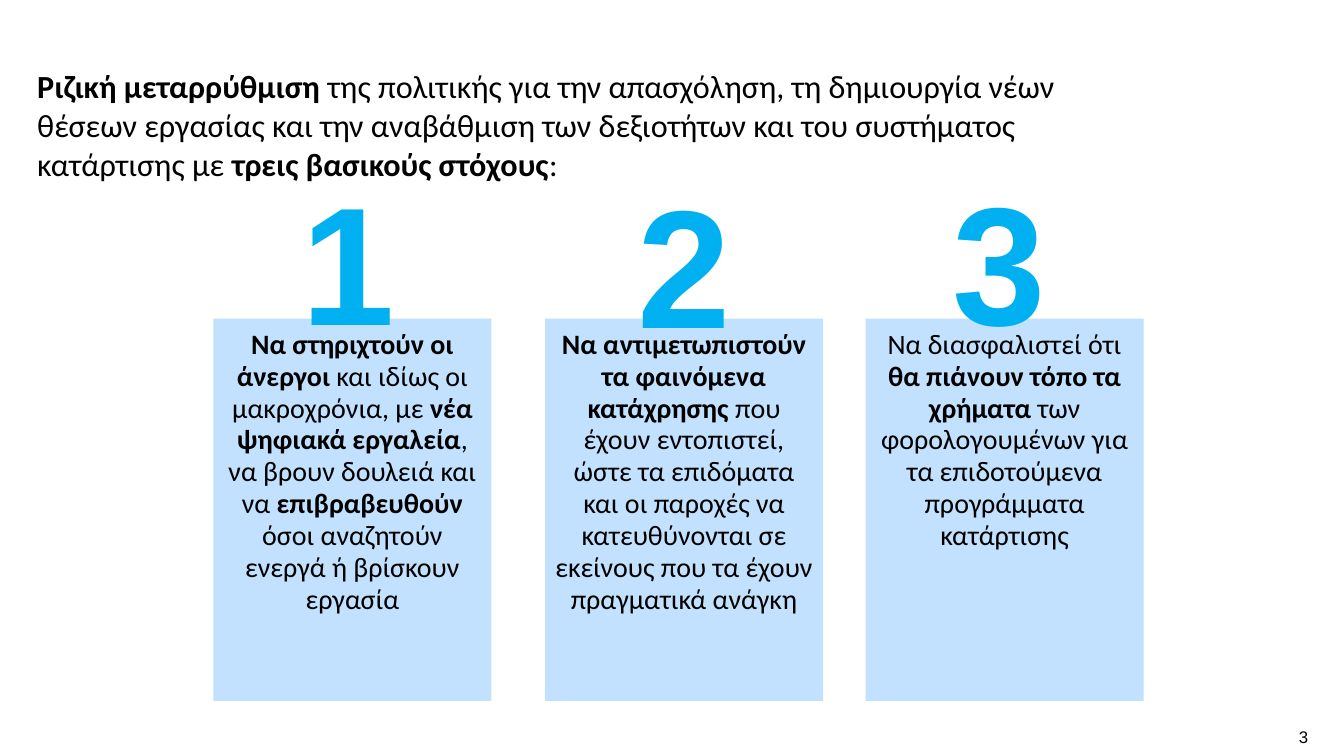
from dataclasses import dataclass

from pptx import Presentation
from pptx import util as u
from pptx.dml import color
from pptx.enum import text


@dataclass(frozen=True)
class Theme:
    ink: color.RGBColor = color.RGBColor.from_string("000000")
    accent: color.RGBColor = color.RGBColor.from_string("00B0F0")
    card: color.RGBColor = color.RGBColor.from_string("C1E1FE")
    body_font: str = "Calibri"
    number_font: str = "Arial"
    intro_size: int = 23
    goal_size: int = 20
    numeral_size: int = 120
    page_size: int = 12


theme = Theme()


def write(shape, runs, *, size, font=theme.body_font, ink=theme.ink,
          align=text.PP_ALIGN.CENTER, anchor=text.MSO_ANCHOR.TOP,
          insets=(0.25, 0.25, 0.25, 0.1), spacing=1.0, wrap=True):
    """Fill a shape with one paragraph of (words, bold) runs."""
    frame = shape.text_frame
    frame.word_wrap = wrap
    frame.vertical_anchor = anchor
    (frame.margin_left, frame.margin_top,
     frame.margin_right, frame.margin_bottom) = map(u.Cm, insets)
    paragraph = frame.paragraphs[0]
    paragraph.alignment = align
    paragraph.line_spacing = spacing
    for words, bold in runs:
        run = paragraph.add_run()
        run.text = words
        run.font.name = font
        run.font.size = u.Pt(size)
        run.font.bold = bold
        run.font.color.rgb = ink


deck = Presentation()
deck.slide_width, deck.slide_height = u.Cm(33.88), u.Cm(19.05)
slide = deck.slides.add_slide(deck.slide_layouts[6])

# Introduction
intro = slide.shapes.add_textbox(u.Cm(0.69), u.Cm(1.55), u.Cm(26.29), u.Cm(2.92))
write(intro, [
    ("Ριζική μεταρρύθμιση ", True),
    ("της πολιτικής για την απασχόληση, τη δημιουργία νέων θέσεων εργασίας και "
     "την αναβάθμιση των δεξιοτήτων και του συστήματος κατάρτισης με ", False),
    ("τρεις βασικούς στόχους", True),
    (":", False),
], size=theme.intro_size, align=text.PP_ALIGN.LEFT, insets=(0.25, 0.13, 0.25, 0.13))

# Three goals: card left, numeral left, numeral top, wording
goals = [
    (5.38, 6.91, 4.6, [
        ("Να στηριχτούν οι άνεργοι", True),
        (" και ιδίως οι μακροχρόνια, με ", False),
        ("νέα ψηφιακά εργαλεία", True),
        (", να βρουν δουλειά και να ", False),
        ("επιβραβευθούν", True),
        (" όσοι αναζητούν ενεργά ή βρίσκουν εργασία", False),
    ]),
    (13.74, 15.37, 4.67, [
        ("Να αντιμετωπιστούν τα φαινόμενα κατάχρησης ", True),
        ("που έχουν εντοπιστεί, ώστε τα επιδόματα και οι παροχές να "
         "κατευθύνονται σε εκείνους που τα έχουν πραγματικά ανάγκη", False),
    ]),
    (21.82, 23.32, 4.6, [
        ("Να διασφαλιστεί ότι ", False),
        ("θα πιάνουν τόπο τα χρήματα ", True),
        ("των φορολογουμένων για τα επιδοτούμενα προγράμματα κατάρτισης", False),
    ]),
]
for number, (card_left, numeral_left, numeral_top, wording) in enumerate(goals, 1):
    card = slide.shapes.add_shape(1, u.Cm(card_left), u.Cm(8.03), u.Cm(7.01), u.Cm(9.63))
    card.shadow.inherit = False
    card.fill.solid()
    card.fill.fore_color.rgb = theme.card
    card.line.fill.background()
    write(card, wording, size=theme.goal_size, spacing=0.95)

    numeral = slide.shapes.add_textbox(
        u.Cm(numeral_left), u.Cm(numeral_top), u.Cm(3.76), u.Cm(4.47))
    write(numeral, [(str(number), True)], size=theme.numeral_size,
          font=theme.number_font, ink=theme.accent, spacing=0.85,
          anchor=text.MSO_ANCHOR.BOTTOM, insets=(0, 0.1, 0, 0))

# Page number
page = slide.shapes.add_textbox(u.Cm(32.44), u.Cm(18.16), u.Cm(0.84), u.Cm(0.79))
write(page, [("3", False)], size=theme.page_size, font=theme.number_font,
      insets=(0.15, 0.15, 0.15, 0.15), wrap=False)

deck.save("out.pptx")
